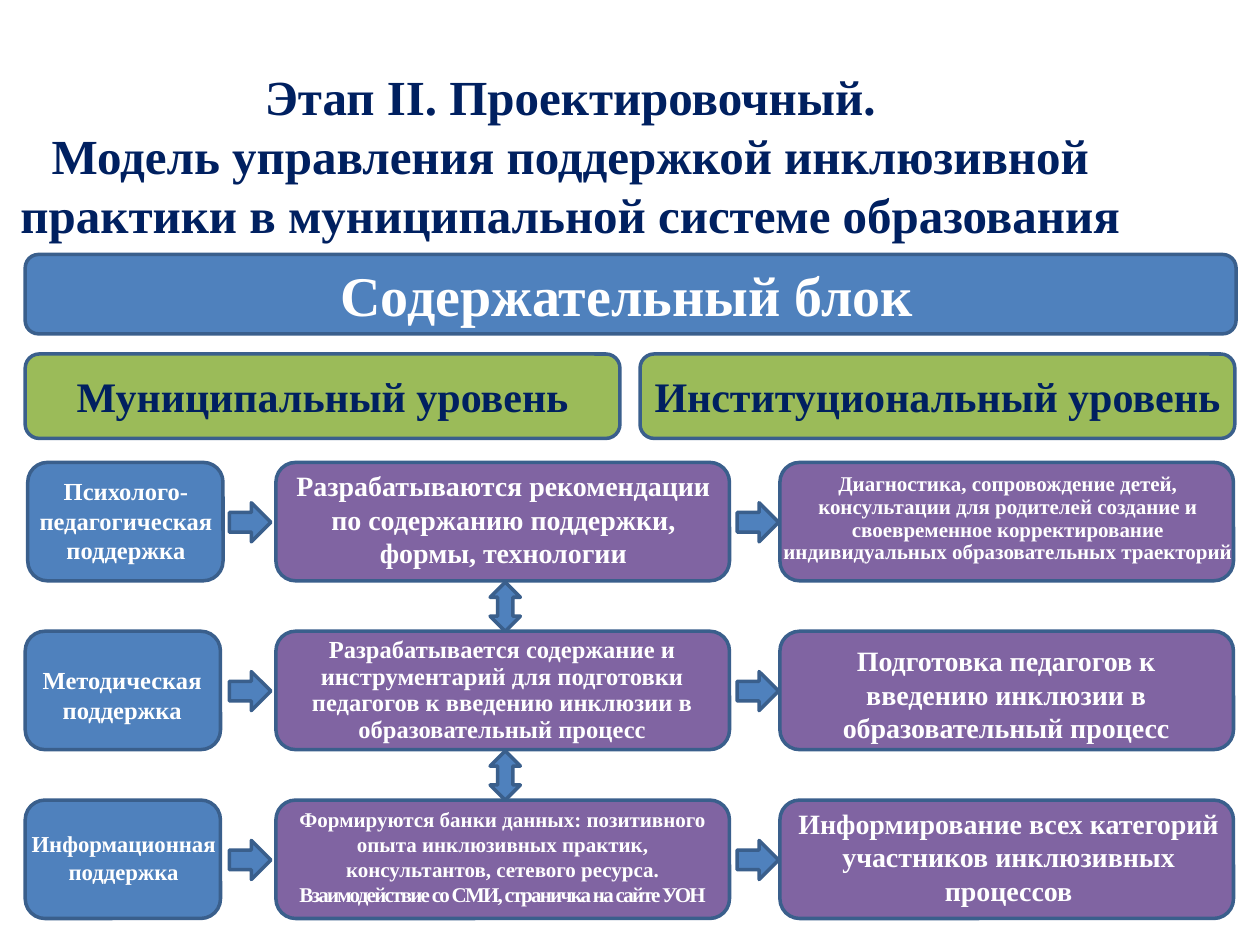
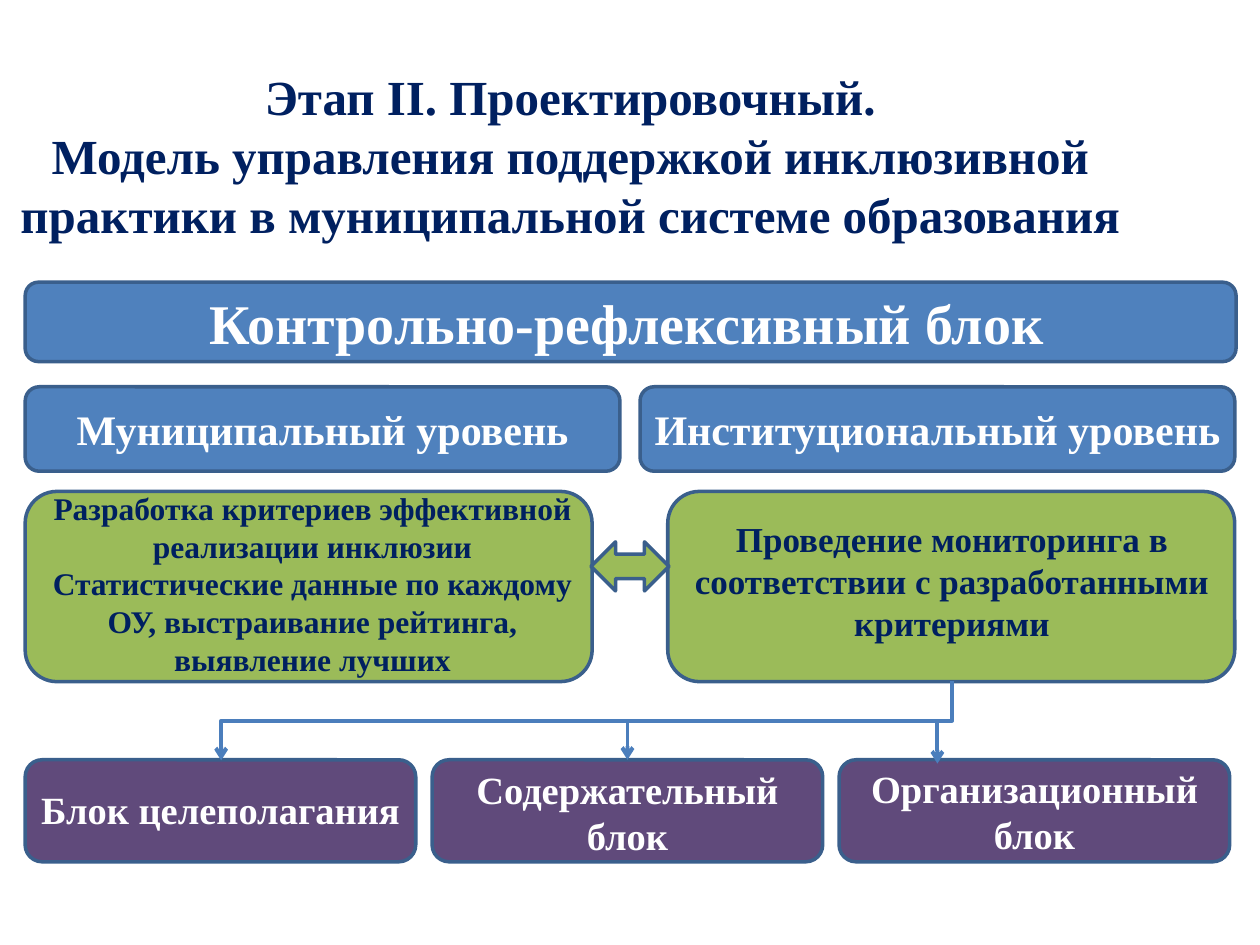
from lxml import etree
from pptx import Presentation
from pptx.dml.color import RGBColor
from pptx.enum.shapes import MSO_CONNECTOR, MSO_SHAPE
from pptx.enum.text import MSO_ANCHOR, MSO_AUTO_SIZE, PP_ALIGN
from pptx.oxml.ns import qn
from pptx.util import Inches, Pt

FONT = "Times New Roman"
NAVY, WHITE = "002060", "FFFFFF"
BLUE, GREEN, PURPLE, PLUM = "4F81BD", "9BBB59", "8064A2", "604A7B"
OUTLINE, LINK = "3A5F8C", "4B7EBC"
STAGE_TITLE = (
    "Этап II. Проектировочный.\v"
    "Модель управления поддержкой инклюзивной практики "
    "в муниципальной системе образования"
)
LEFT, HALF_LEFT = 0.2, 5.08
FULL_WIDTH, HALF_WIDTH = 9.61, 4.72
ROW_TOP, ROW_STEP, ROW_HEIGHT = 3.67, 1.34, 0.94
CARD_WIDTH = 3.6


def color(hex_value):
    return RGBColor.from_string(hex_value)


def inches(*lengths):
    return [Inches(length) for length in lengths]


def format_paragraph(paragraph, size, hex_value):
    paragraph.alignment = PP_ALIGN.CENTER
    for run in paragraph.runs:
        run.font.name = FONT
        run.font.size = Pt(size)
        run.font.bold = True
        run.font.color.rgb = color(hex_value)


def add_block(slide, box, fill, preset=MSO_SHAPE.ROUNDED_RECTANGLE):
    block = slide.shapes.add_shape(preset, *inches(*box))
    block.shadow.inherit = False
    block.fill.solid()
    block.fill.fore_color.rgb = color(fill)
    block.line.color.rgb = color(OUTLINE)
    block.line.width = Pt(2)
    return block


def add_label(slide, box, text, size, hex_value=WHITE, spacing=None):
    label = slide.shapes.add_textbox(*inches(*box))
    frame = label.text_frame
    frame.word_wrap = True
    frame.text = text
    for paragraph in frame.paragraphs:
        format_paragraph(paragraph, size, hex_value)
        if spacing:
            paragraph.line_spacing = spacing
    return label


def add_condensed_run(label, text, size):
    paragraph = label.text_frame.paragraphs[0]
    run = paragraph.add_run()
    run.text = text
    format_paragraph(paragraph, size, WHITE)
    run.font._element.set("spc", "-100")


def add_link(slide, kind, start, end):
    link = slide.shapes.add_connector(kind, *inches(*start, *end))
    link.line.color.rgb = color(LINK)
    link.line.width = Pt(2.25)
    properties = link._element.spPr
    etree.SubElement(link.line._get_or_add_ln(), qn("a:tailEnd"), type="arrow")
    etree.SubElement(properties, qn("a:effectLst"))
    return link


def start_slide(deck):
    slide = deck.slides.add_slide(deck.slide_layouts[5])
    title = slide.shapes.title
    title.left, title.top, title.width, title.height = inches(-0.2, 0.52, 9.45, 1.42)
    frame = title.text_frame
    frame.text = STAGE_TITLE
    frame.word_wrap = True
    frame.auto_size = MSO_AUTO_SIZE.NONE
    frame.vertical_anchor = MSO_ANCHOR.MIDDLE
    format_paragraph(frame.paragraphs[0], 28, NAVY)
    return slide


def add_headings(slide, heading, heading_top, level_top, level_fill, level_color):
    add_block(slide, (LEFT, heading_top, FULL_WIDTH, 0.63), BLUE)
    add_label(slide, (1.22, heading_top, 7.51, 0.64), heading, 32)
    levels = ((LEFT, "Муниципальный уровень"), (HALF_LEFT, "Институциональный уровень"))
    for left, level in levels:
        add_block(slide, (left, level_top, HALF_WIDTH, 0.67), level_fill)
        add_label(slide, (left, level_top + 0.08, HALF_WIDTH, 0.5), level, 24, level_color)


def build_content_slide(deck):
    slide = start_slide(deck)
    add_headings(slide, "Содержательный блок", 2.02, 2.81, GREEN, NAVY)

    for row, support_left in enumerate((0.22, LEFT, LEFT)):
        top = ROW_TOP + row * ROW_STEP
        add_block(slide, (support_left, top, 1.55, ROW_HEIGHT), BLUE)
        for left in (2.19, 6.19):
            add_block(slide, (left, top, CARD_WIDTH, ROW_HEIGHT), PURPLE)
        for left in (1.82, 5.85):
            add_block(slide, (left, top + 0.32, 0.33, 0.31), BLUE, MSO_SHAPE.RIGHT_ARROW)
        if row:
            add_block(slide, (3.89, top - 0.39, 0.24, 0.39), BLUE, MSO_SHAPE.UP_DOWN_ARROW)

    supports = (
        ((0.2, 3.73, 1.6, 0.81), "Психолого-педагогическая поддержка", 14),
        ((0.17, 5.23, 1.6, 0.57), "Методическая поддержка", 14),
        ((0.14, 6.54, 1.68, 0.54), "Информационная поддержка", 13),
    )
    for support in supports:
        add_label(slide, *support)

    add_label(slide, (2.2, 3.67, 3.59, 0.91),
              "Разрабатываются рекомендации по содержанию поддержки, формы, технологии", 16)
    add_label(slide, (2.19, 5.01, 3.59, 0.95),
              "Разрабатывается содержание и инструментарий для подготовки педагогов "
              "к введению инклюзии в образовательный процесс", 14, spacing=0.9)
    databases = add_label(slide, (2.19, 6.35, 3.6, 0.91),
                          "Формируются банки данных: позитивного опыта инклюзивных практик, "
                          "консультантов, сетевого ресурса. ", 12)
    add_condensed_run(databases, "Взаимодействие со СМИ, страничка на сайте УОН", 12)

    add_label(slide, (6.08, 3.71, 3.84, 0.83),
              "Диагностика, сопровождение детей, консультации для родителей создание и "
              "своевременное корректирование индивидуальных образовательных траекторий",
              12, spacing=0.9)
    add_label(slide, (6.19, 5.06, 3.59, 0.91),
              "Подготовка педагогов к введению инклюзии в образовательный процесс", 16)
    add_label(slide, (6.21, 6.35, 3.59, 0.91),
              "Информирование всех категорий участников инклюзивных процессов", 16)


def build_control_slide(deck):
    slide = start_slide(deck)
    add_headings(slide, "Контрольно-рефлексивный блок", 2.24, 3.07, BLUE, WHITE)

    for left in (LEFT, 5.3):
        add_block(slide, (left, 3.9, 4.5, 1.51), GREEN)
    add_block(slide, (4.69, 4.3, 0.62, 0.39), GREEN, MSO_SHAPE.LEFT_RIGHT_ARROW)
    add_label(slide, (0.12, 3.83, 4.72, 1.62),
              "Разработка критериев эффективной реализации инклюзии\n"
              "Статистические данные по каждому ОУ, выстраивание рейтинга, выявление лучших",
              18, NAVY)
    add_label(slide, (5.31, 4.06, 4.49, 1.11),
              "Проведение мониторинга в соответствии с разработанными критериями", 20, NAVY)

    targets = (
        ("Блок целеполагания", 6.19, 0.47),
        ("Содержательный блок", 6.03, 0.84),
        ("Организационный блок", 6.02, 0.84),
    )
    target_blocks = []
    for column, (target, label_top, label_height) in enumerate(targets):
        left = LEFT + column * 3.23
        target_blocks.append(add_block(slide, (left, 6.03, 3.1, 0.81), PLUM))
        add_label(slide, (left, label_top, 3.1, label_height), target, 22)

    feedback = add_link(slide, MSO_CONNECTOR.ELBOW, (4.34, 2.82), (4.97, 8.62))
    feedback._element.spPr.find(qn("a:xfrm")).set("rot", "5400000")
    content_link = add_link(slide, MSO_CONNECTOR.STRAIGHT, (4.98, 5.72), (4.98, 6.03))
    content_link.end_connect(target_blocks[1], 0)
    add_link(slide, MSO_CONNECTOR.STRAIGHT, (7.44, 5.74), (7.44, 6.06))


def main():
    deck = Presentation()
    deck.slide_width, deck.slide_height = inches(10, 7.5)
    build_content_slide(deck)
    build_control_slide(deck)
    deck.save("out.pptx")


if __name__ == "__main__":
    main()
